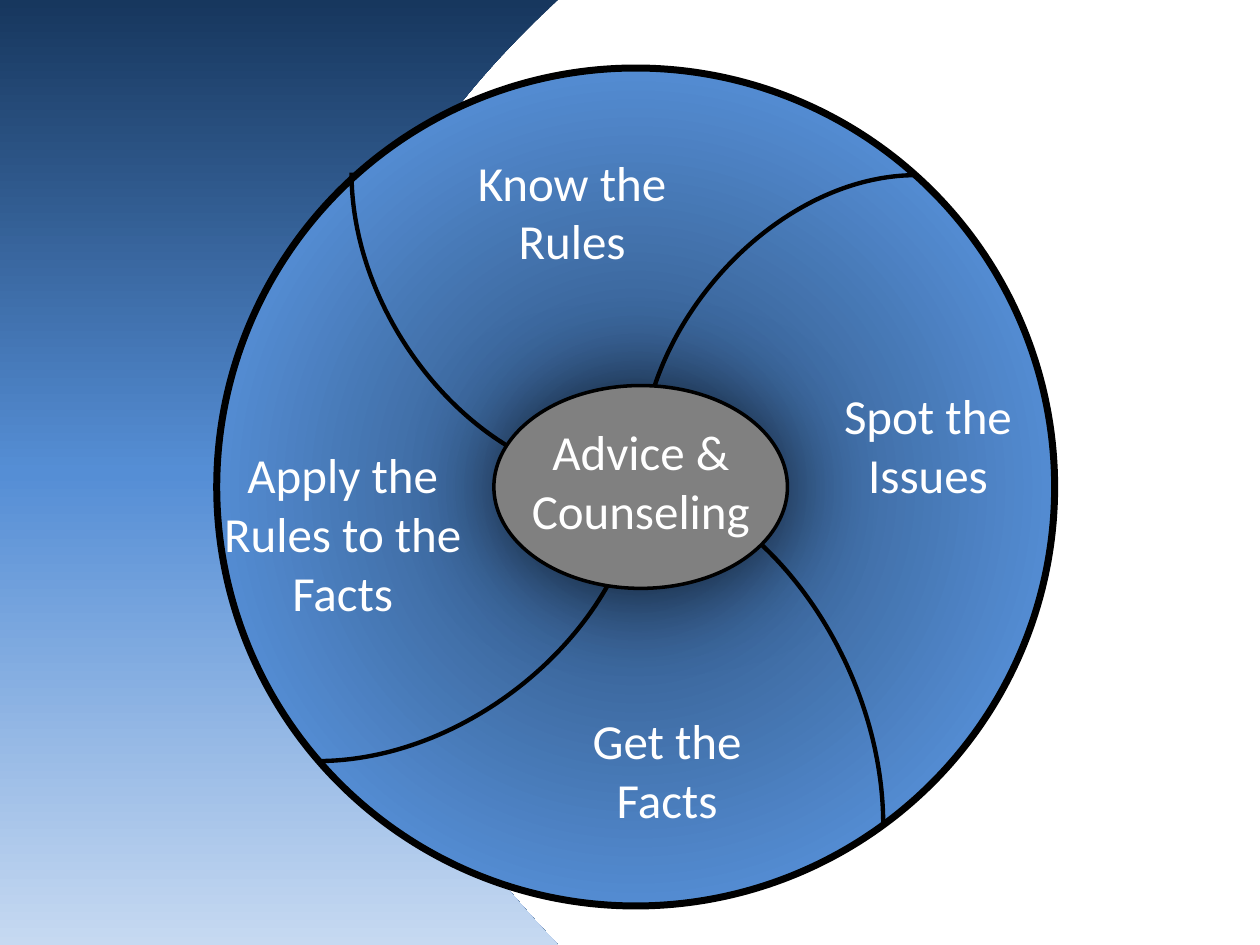
from lxml import etree
from pptx import Presentation
from pptx.dml.color import RGBColor
from pptx.enum.shapes import MSO_CONNECTOR as Connector, MSO_SHAPE as Shape
from pptx.enum.text import MSO_ANCHOR as Anchor, PP_ALIGN as Align
from pptx.oxml import parse_xml
from pptx.oxml.ns import nsdecls, qn
from pptx.util import Inches, Pt

NAVY = RGBColor(0x17, 0x37, 0x5E)
DEEP_BLUE = RGBColor(0x2A, 0x4C, 0x75)
BLUE = RGBColor(0x55, 0x8E, 0xD5)
PALE_BLUE = RGBColor(0xC6, 0xD9, 0xF1)
GRAY = RGBColor(0x80, 0x80, 0x80)
BLACK = RGBColor(0, 0, 0)
WHITE = RGBColor(0xFF, 0xFF, 0xFF)

LABEL_FONT = {"name": "Calibri", "size": Pt(28)}
LINEAR_DOWN = '<a:lin ang="5400000" scaled="0"/>'
FROM_CENTER = ('<a:path path="circle"><a:fillToRect l="50000" t="50000" '
               'r="50000" b="50000"/></a:path>')

# Text, left, top, width, height
LABELS = [
    ("Apply the Rules to the Facts", 1.68, 3.54, 2.08, 1.38),
    ("Know the Rules", 3.38, 1.01, 2.32, 1.33),
    ("Get the Facts", 4.46, 5.61, 1.67, 1),
    ("Spot the Issues", 6.53, 3.03, 1.67, 1),
    ("Advice & Counseling", 3.94, 3.22, 2.29, 1.18),
]


def inches(*values):
    return [Inches(value) for value in values]


def set_gradient(shape, stops, direction):
    """Fill a shape with (percent, colour) stops."""
    stop_xml = "".join(
        f'<a:gs pos="{percent * 1000}"><a:srgbClr val="{color}"/></a:gs>'
        for percent, color in stops)
    gradient = parse_xml(
        f'<a:gradFill {nsdecls("a")} rotWithShape="1">'
        f'<a:gsLst>{stop_xml}</a:gsLst>{direction}</a:gradFill>')
    shape.fill.solid()
    properties = shape._element.spPr
    properties.replace(properties.find(qn("a:solidFill")), gradient)


def set_line(shape, width):
    shape.line.color.rgb = BLACK
    shape.line.width = Pt(width)


def set_glow_shadow(shape):
    """Give a shape a wide, soft black shadow."""
    shape._element.spPr.find(qn("a:effectLst")).append(parse_xml(
        f'<a:outerShdw {nsdecls("a")} blurRad="{Pt(52)}" dist="{Pt(1)}" '
        f'dir="{42 * 60000}" algn="tl" rotWithShape="0">'
        f'<a:srgbClr val="{BLACK}"><a:alpha val="65000"/></a:srgbClr>'
        '</a:outerShdw>'))


def bezier(start, control1, control2, end, steps=60):
    """Return the points of a cubic curve after its start."""
    points = []
    for step in range(1, steps + 1):
        t = step / steps
        weights = ((1 - t) ** 3, 3 * t * (1 - t) ** 2,
                   3 * t * t * (1 - t), t ** 3)
        points.append(tuple(
            Inches(sum(weight * value for weight, value in zip(weights, axis)))
            for axis in zip(start, control1, control2, end)))
    return points


def add_side_panel(shapes):
    edge = bezier((4.43, 0), (2.37, 1.88), (1.58, 4.51), (4.43, 7.5))
    builder = shapes.build_freeform(0, 0, scale=1.0)
    builder.add_line_segments(
        [(Inches(4.43), 0), *edge, (0, Inches(7.5))], close=True)
    panel = builder.convert_to_shape()
    panel.shadow.inherit = False
    panel.line.fill.background()
    set_gradient(panel, [(0, NAVY), (50, BLUE), (100, PALE_BLUE)], LINEAR_DOWN)


def add_ellipse(shapes, left, top, width, height, line_width):
    ellipse = shapes.add_shape(Shape.OVAL, *inches(left, top, width, height))
    ellipse.shadow.inherit = False
    set_line(ellipse, line_width)
    return ellipse


def add_divider(shapes, begin, end, bend, rotation=0):
    """Add an S-curve whose middle lies at the given share of its length."""
    divider = shapes.add_connector(Connector.CURVE, *inches(*begin, *end))
    set_line(divider, 2.5)
    properties = divider._element.spPr
    etree.SubElement(properties, qn("a:effectLst"))
    if rotation:
        properties.find(qn("a:xfrm")).set("rot", str(rotation * 60000))
    guides = properties.find(qn("a:prstGeom")).get_or_add_avLst()
    etree.SubElement(guides, qn("a:gd"), name="adj1",
                     fmla=f"val {round(bend * 100000)}")


def add_label(shapes, text, *place):
    box = shapes.add_textbox(*inches(*place))
    frame = box.text_frame
    frame.word_wrap = True
    frame.vertical_anchor = Anchor.MIDDLE
    para = frame.paragraphs[0]
    para.alignment = Align.CENTER
    span = para.add_run()
    span.text = text
    for name, value in LABEL_FONT.items():
        setattr(span.font, name, value)
    span.font.color.rgb = WHITE


def main():
    deck = Presentation()
    deck.slide_width, deck.slide_height = inches(10, 7.5)
    page = deck.slides.add_slide(deck.slide_layouts[6])
    shapes = page.shapes

    # Background panel
    add_side_panel(shapes)

    # Wheel with its two curved dividers
    wheel = shapes.add_group_shape().shapes
    disc = add_ellipse(wheel, 1.72, 0.54, 6.65, 6.65, 4)
    set_gradient(disc, [(0, DEEP_BLUE), (73, BLUE), (100, BLUE)], FROM_CENTER)
    add_divider(wheel, (7.27, 1.39), (2.52, 6.04), 0.46)
    add_divider(wheel, (2.31, 6.07), (7.49, 1.85), 0.53, rotation=270)

    # Hub
    hub = add_ellipse(shapes, 3.92, 3.06, 2.33, 1.61, 2)
    hub.fill.solid()
    hub.fill.fore_color.rgb = GRAY
    set_glow_shadow(hub)

    # Labels
    for label in LABELS:
        add_label(shapes, *label)

    deck.save("out.pptx")


if __name__ == "__main__":
    main()
